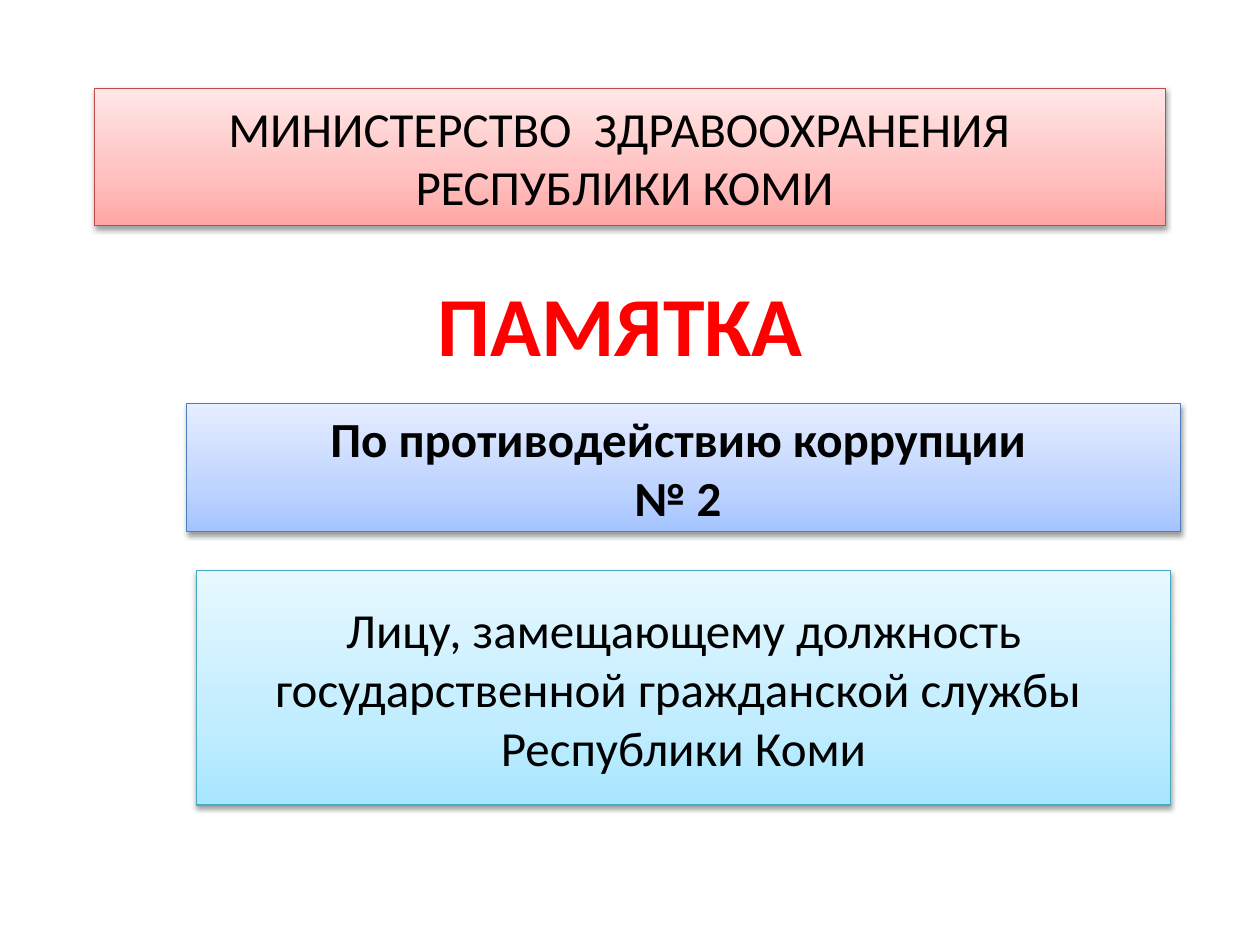
"""Builds the cover slide of an anti-corruption memo."""
import copy

import pptx
import pptx.dml.color
import pptx.enum.shapes
import pptx.enum.text
import pptx.oxml
import pptx.oxml.ns
import pptx.util

Pt = pptx.util.Pt

MINISTRY = {
    "text": "МИНИСТЕРСТВО  ЗДРАВООХРАНЕНИЯ  \vРЕСПУБЛИКИ КОМИ ",
    "box": (54, 50.4, 612, 78.5),
    "gradient": ("FFA6A5", "FFC0BF", "FFE7E7"), "line": "BF4C48",
}
HEADING = {
    "text": "ПАМЯТКА ", "box": (108, 152, 504, 78.5),
    "size": 48, "bold": True, "color": "FF0000", "anchor": "TOP",
}
PANELS = [
    {
        "text": "По противодействию коррупции \n№ 2 ",
        "box": (106.6, 230.4, 568, 73.4), "bold": True,
        "gradient": ("A4C4FF", "BFD4FF", "E6EEFF"), "line": "4B7EBC",
    },
    {
        "text": "Лицу, замещающему должность государственной гражданской службы  Республики Коми",
        "box": (112.3, 326.2, 556.6, 133.9),
        "gradient": ("A7E6FF", "C1EDFF", "E7F8FF"), "line": "46AAC5",
    },
]
STOPS = (0, 0.35, 1)
SHADOW = (
    '<a:outerShdw xmlns:a="http://schemas.openxmlformats.org/drawingml/2006/main" '
    'blurRad="40000" dist="20000" dir="5400000" rotWithShape="0">'
    '<a:srgbClr val="000000"><a:alpha val="38000"/></a:srgbClr></a:outerShdw>'
)


def rgb(value):
    """Turn a hex string into a colour."""
    return pptx.dml.color.RGBColor.from_string(value)


def place(shape, item):
    """Move a shape to its box."""
    shape.left, shape.top, shape.width, shape.height = map(Pt, item["box"])


def write(shape, item):
    """Set and format the centred text of a shape."""
    frame = shape.text_frame
    frame.text = item["text"]
    frame.word_wrap = True
    frame.auto_size = pptx.enum.text.MSO_AUTO_SIZE.NONE
    frame.vertical_anchor = pptx.enum.text.MSO_ANCHOR[item.get("anchor", "MIDDLE")]
    for paragraph in frame.paragraphs:
        paragraph.alignment = pptx.enum.text.PP_ALIGN.CENTER
        for run in paragraph.runs:
            run.font.name = "Calibri"
            run.font.size = Pt(item.get("size", 28))
            run.font.bold = item.get("bold", False)
            run.font.color.rgb = rgb(item.get("color", "000000"))


def decorate(shape, item):
    """Give a shape its upward gradient, outline and soft shadow."""
    properties = shape._element.spPr
    shape.fill.gradient()
    shape.fill.gradient_angle = 90
    stop_list = properties.find(".//" + pptx.oxml.ns.qn("a:gsLst"))
    stop_list.append(copy.deepcopy(stop_list[-1]))
    for stop, position, color in zip(shape.fill.gradient_stops, STOPS, item["gradient"]):
        stop.position = position
        stop.color.rgb = rgb(color)
    shape.line.color.rgb = rgb(item["line"])
    shape.line.width = Pt(0.75)
    shape.shadow.inherit = False
    effects = properties.find(pptx.oxml.ns.qn("a:effectLst"))
    effects.append(pptx.oxml.parse_xml(SHADOW))


def main():
    """Build and save the slide."""
    presentation = pptx.Presentation()
    presentation.slide_width, presentation.slide_height = Pt(720), Pt(540)
    slide = presentation.slides.add_slide(presentation.slide_layouts[0])
    rectangle = pptx.enum.shapes.MSO_SHAPE.RECTANGLE
    pairs = [(slide.shapes.title, MINISTRY), (slide.placeholders[1], HEADING)]
    for panel in PANELS:
        pairs.append((slide.shapes.add_shape(rectangle, *map(Pt, panel["box"])), panel))
    for shape, item in pairs:
        place(shape, item)
        write(shape, item)
        if "gradient" in item:
            decorate(shape, item)
    presentation.save("out.pptx")


if __name__ == "__main__":
    main()
